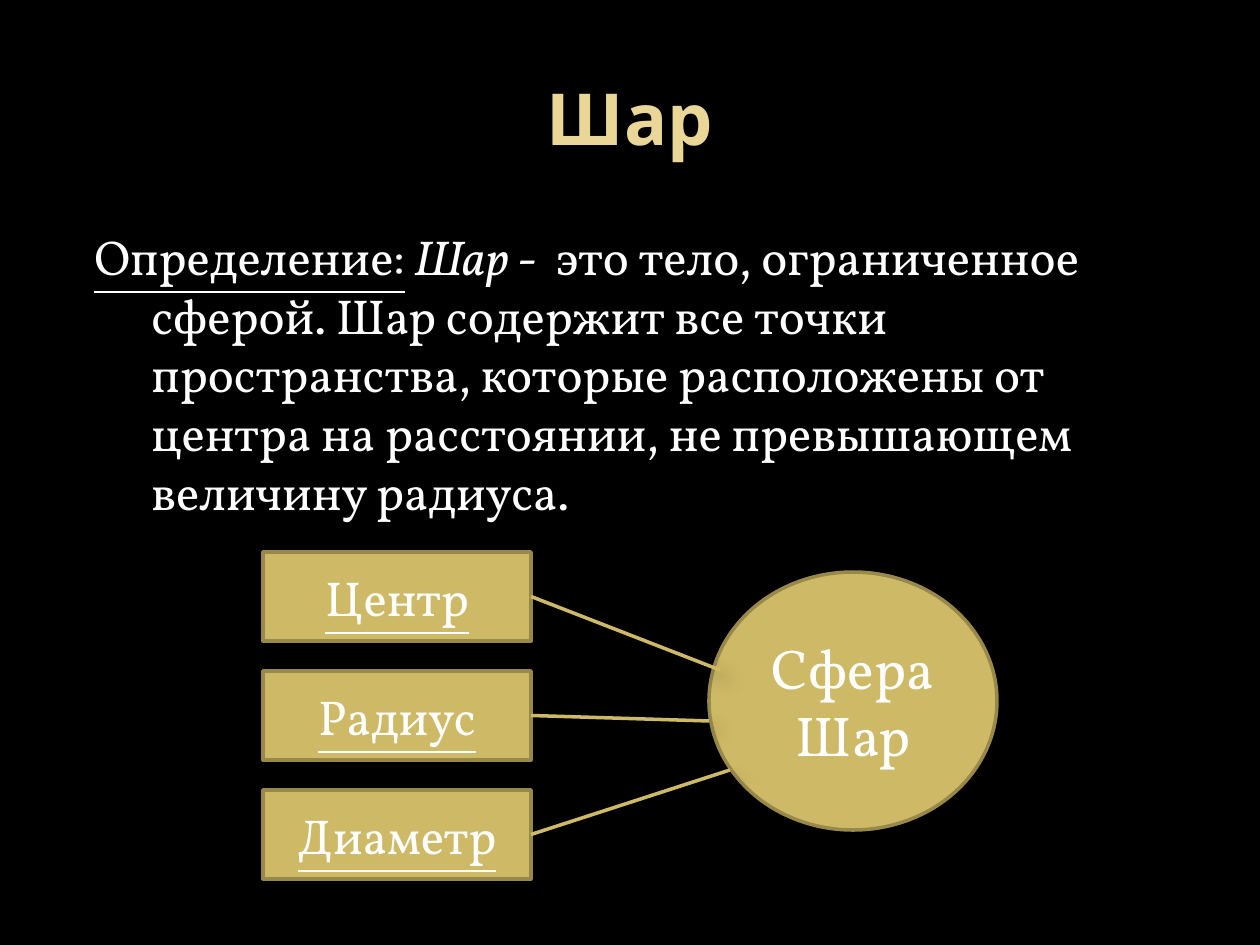
from lxml import etree
from pptx import Presentation
from pptx.dml.color import RGBColor
from pptx.enum.shapes import MSO_CONNECTOR, MSO_SHAPE
from pptx.enum.text import MSO_ANCHOR, PP_ALIGN
from pptx.oxml.ns import qn
from pptx.util import Pt

RECT, OVAL = MSO_SHAPE.RECTANGLE, MSO_SHAPE.OVAL
LINE = MSO_CONNECTOR.STRAIGHT
MID, TOP = MSO_ANCHOR.MIDDLE, MSO_ANCHOR.TOP
CENTER, LEFT = PP_ALIGN.CENTER, PP_ALIGN.LEFT

COLORS = {"back": "000000", "title": "EAD696", "text": "FFFFFF",
          "gold": "CEB966", "edge": "98894B"}
SERIF = {"name": "Vollkorn", "size": Pt(28)}
BIG = {**SERIF, "size": Pt(32)}
HEAD = {"name": "Noto Sans", "size": Pt(41), "bold": True}
UNDER = {"underline": True}

# Each paragraph is a list of (text, extra font values)
TITLE = [[("Шар", {})]]
BODY = [[
    ("Определение:", UNDER),
    (" ", {}),
    ("Шар", {"italic": True}),
    (" -  это тело, ограниченное сферой. Шар содержит все точки "
     "пространства, которые расположены от центра на расстоянии, "
     "не превышающем величину радиуса.", {}),
]]
SOLID = [[("Сфера", {})], [("Шар", {})]]
# Part of the ball, and where its line meets the oval
PARTS = [("Центр", (720, 670)), ("Радиус", (709, 721)), ("Диаметр", (730, 770))]

TITLE_BOX = (63, 38, 1134, 157)
BODY_BOX = (63, 220, 1134, 649)
OVAL_BOX = (709, 572, 288, 258)
PART_X, PART_Y, PART_W, PART_H, STEP = 263, 552, 268, 89, 119


def px(n):
    return round(n * 914400 / 126)


def rgb(key):
    return RGBColor.from_string(COLORS[key])


def write(shape, paras, font, color="text", align=CENTER, anchor=MID):
    frame = shape.text_frame
    frame.word_wrap = True
    frame.vertical_anchor = anchor
    for i, runs in enumerate(paras):
        para = frame.paragraphs[0] if i == 0 else frame.add_paragraph()
        para.alignment = align
        for text, extra in runs:
            run = para.add_run()
            run.text = text
            run.font.color.rgb = rgb(color)
            for key, value in {**font, **extra}.items():
                setattr(run.font, key, value)


def add_text(box, *args, **opts):
    shape = slide.shapes.add_textbox(*map(px, box))
    write(shape, *args, **opts)
    return shape


def add_gold(kind, box, paras, font):
    shape = slide.shapes.add_shape(kind, *map(px, box))
    shape.shadow.inherit = False
    shape.fill.solid()
    shape.fill.fore_color.rgb = rgb("gold")
    shape.line.color.rgb = rgb("edge")
    shape.line.width = Pt(2)
    write(shape, paras, font)
    return shape


def add_shadow(line):
    effects = etree.SubElement(line._element.spPr, qn("a:effectLst"))
    outer = etree.SubElement(effects, qn("a:outerShdw"), blurRad=str(Pt(10.2)),
                             dist=str(Pt(8)), dir=str(45 * 60000))
    color = etree.SubElement(outer, qn("a:srgbClr"), val=COLORS["back"])
    etree.SubElement(color, qn("a:alpha"), val="35000")


def add_link(part, end):
    """Draw a line from the part's right side to a point on the oval."""
    line = slide.shapes.add_connector(LINE, 0, 0, *map(px, end))
    line.begin_connect(part, 3)
    line.line.color.rgb = rgb("gold")
    line.line.width = Pt(2)
    add_shadow(line)


deck = Presentation()
deck.slide_width, deck.slide_height = px(1260), px(945)
slide = deck.slides.add_slide(deck.slide_layouts[6])
slide.background.fill.solid()
slide.background.fill.fore_color.rgb = rgb("back")

add_text(TITLE_BOX, TITLE, HEAD, color="title")
body = add_text(BODY_BOX, BODY, SERIF, align=LEFT, anchor=TOP)
props = body.text_frame.paragraphs[0]._p.get_or_add_pPr()
props.set("marL", str(px(76)))
props.set("indent", str(px(-57)))

add_gold(OVAL, OVAL_BOX, SOLID, BIG)
boxes = [
    add_gold(RECT, (PART_X, PART_Y + i * STEP, PART_W, PART_H),
             [[(name, UNDER)]], SERIF)
    for i, (name, _) in enumerate(PARTS)
]
for box, (_, end) in zip(boxes, PARTS):
    add_link(box, end)

deck.save("out.pptx")
